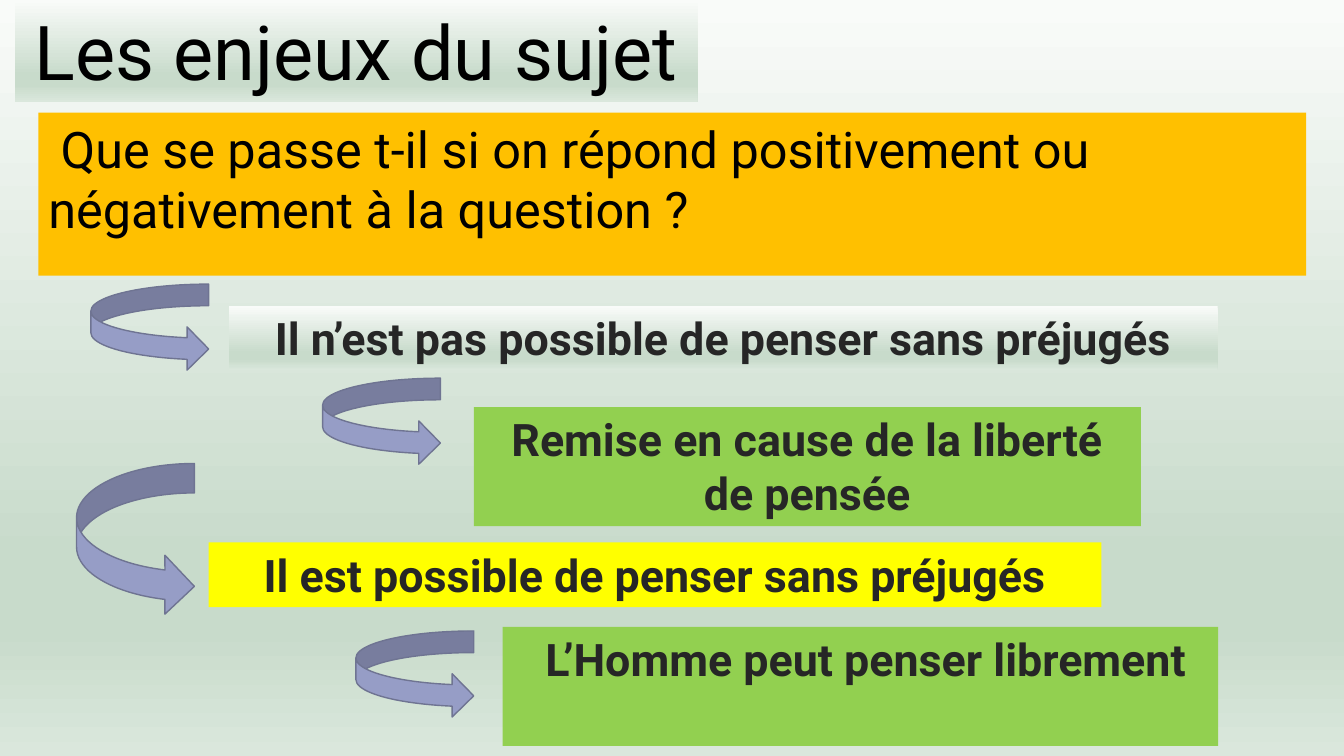
from dataclasses import dataclass

from lxml import etree
from pptx import Presentation
from pptx import util as u
from pptx.dml.color import RGBColor
from pptx.enum import shapes, text
from pptx.oxml import ns


@dataclass(frozen=True)
class Theme:
    font: str = "Roboto"
    head: int = 54
    ask: int = 36
    item: int = 32
    ink: str = "000000"
    dark: str = "262626"
    edge: str = "FFFFFF"
    gold: str = "FFC000"
    sun: str = "FFFF00"
    leaf: str = "92D050"
    arrow: str = "969DC6"
    rim: str = "6F7492"
    mist: tuple = ((0, "F9FBF9"), (74, "C8DBCB"), (83, "C8DBCB"), (100, "DAE7DC"))


class Deck:
    def __init__(self, theme):
        self.theme = theme
        self.prs = Presentation()
        self.prs.slide_width = u.Cm(33.87)
        self.prs.slide_height = u.Cm(19.05)
        self.slide = self.prs.slides.add_slide(self.prs.slide_layouts[5])
        self.blend(self.slide.background.fill, self.slide.element)

    def blend(self, fill, root):
        fill.gradient()
        fill.gradient_angle = 270
        stops = root.find(".//" + ns.qn("a:gsLst"))
        for stop in list(stops):
            stops.remove(stop)
        for pos, color in self.theme.mist:
            stop = etree.SubElement(stops, ns.qn("a:gs"), pos=str(pos * 1000))
            etree.SubElement(stop, ns.qn("a:srgbClr"), val=color)

    def paint(self, shape, color):
        if color:
            shape.fill.solid()
            shape.fill.fore_color.rgb = RGBColor.from_string(color)
        else:
            self.blend(shape.fill, shape.element)

    def label(self, shape, words, size, color, wrap, center=True, bold=False):
        frame = shape.text_frame
        frame.text = words
        frame.word_wrap = wrap
        frame.auto_size = text.MSO_AUTO_SIZE.NONE
        frame.vertical_anchor = text.MSO_ANCHOR.TOP
        para = frame.paragraphs[0]
        para.alignment = text.PP_ALIGN.CENTER if center else text.PP_ALIGN.LEFT
        font = para.runs[0].font
        font.name = self.theme.font
        font.size = u.Pt(size)
        font.bold = bold
        font.color.rgb = RGBColor.from_string(color)
        return para

    def title(self, words, left, top, width, height):
        box = self.slide.shapes.title
        box.left, box.top, box.width, box.height = map(u.Cm, (left, top, width, height))
        self.paint(box, None)
        self.label(box, words, self.theme.head, self.theme.ink, False)

    def box(self, left, top, width, height, color):
        box = self.slide.shapes.add_textbox(*map(u.Cm, (left, top, width, height)))
        self.paint(box, color)
        return box

    def ask(self, words, *area):
        box = self.box(*area, self.theme.gold)
        para = self.label(box, words, self.theme.ask, self.theme.ink, True, center=False)
        para._p.get_or_add_pPr().set("indent", str(u.Cm(0.31)))

    def item(self, words, left, top, width, height, color, wrap=False, shift=0):
        box = self.box(left, top, width, height, color)
        para = self.label(box, words, self.theme.item, self.theme.dark, wrap, bold=True)
        if shift:
            para._p.get_or_add_pPr().set("marL", str(u.Cm(shift)))
        line = etree.Element(ns.qn("a:ln"), w=str(u.Pt(1.06)))
        fill = etree.SubElement(line, ns.qn("a:solidFill"))
        etree.SubElement(fill, ns.qn("a:srgbClr"), val=self.theme.edge)
        para.runs[0]._r.get_or_add_rPr().insert(0, line)

    def arrow(self, left, top, height=2.18):
        shape = self.slide.shapes.add_shape(
            shapes.MSO_SHAPE.CURVED_RIGHT_ARROW, *map(u.Cm, (left, top, 2.97, height)))
        shape.shadow.inherit = False
        self.paint(shape, self.theme.arrow)
        shape.line.color.rgb = RGBColor.from_string(self.theme.rim)
        shape.line.width = u.Pt(1)

    def save(self):
        self.prs.save("out.pptx")


def main():
    theme = Theme()
    deck = Deck(theme)
    deck.title("Les enjeux du sujet", 0.38, 0, 17.2, 2.57)
    deck.ask("Que se passe t-il si on répond positivement ou négativement à la question ?",
             0.97, 2.84, 31.95, 4.11)
    deck.arrow(2.29, 7.16)
    deck.arrow(1.93, 11.68, 3.84)
    deck.item("Il n’est pas possible de penser sans préjugés", 5.77, 7.7, 24.92, 1.63, None)
    deck.item("Il est possible de penser sans préjugés", 5.26, 13.67, 22.5, 1.63, theme.sun)
    deck.arrow(8.13, 9.53)
    deck.item("Remise en cause de la liberté de pensée",
              11.94, 10.26, 16.81, 3, theme.leaf, wrap=True)
    deck.arrow(8.97, 15.9)
    deck.item("L’Homme peut penser librement",
              12.67, 15.8, 18.03, 3, theme.leaf, wrap=True, shift=0.28)
    deck.save()


if __name__ == "__main__":
    main()
